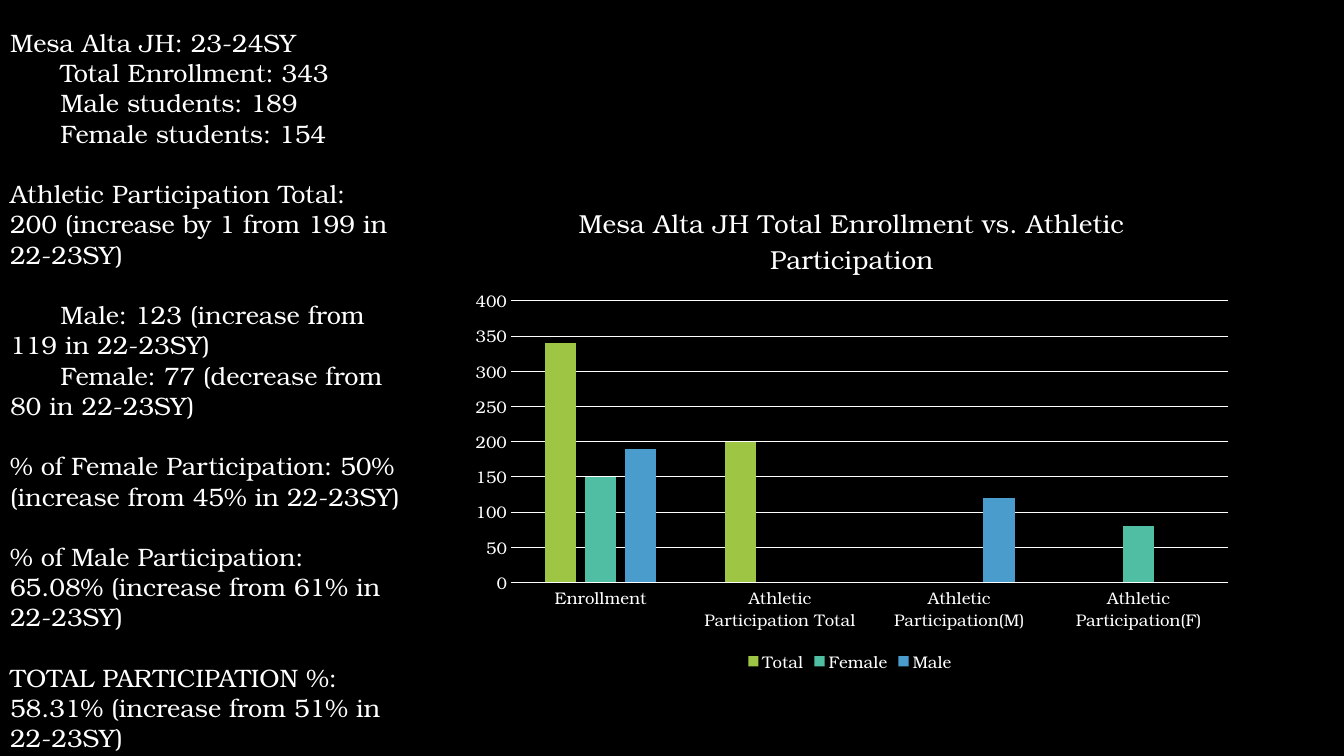
"""Build the Mesa Alta JH enrollment and athletic participation slide."""
from lxml import etree
from pptx import Presentation
from pptx.chart.data import CategoryChartData
from pptx.dml.color import RGBColor
from pptx.enum import chart as ch, text
from pptx.oxml.ns import qn
from pptx.util import Inches, Pt

FACTS = [
    [("Mesa Alta JH: 23-24SY", 0), ("Total Enrollment: 343", 1),
     ("Male students: 189", 1), ("Female students: 154", 1)],
    [("Athletic Participation Total: 200 (increase by 1 from 199 in 22-23SY)", 0)],
    [("Male: 123 (increase from 119 in 22-23SY)", 1),
     ("Female: 77 (decrease from 80 in 22-23SY)", 1)],
    [("% of Female Participation: 50% (increase from 45% in 22-23SY)", 0)],
    [("% of Male Participation: 65.08% (increase from 61% in 22-23SY)", 0)],
    [("TOTAL PARTICIPATION %:", 0), ("58.31% (increase from 51% in 22-23SY)", 0)],
]
CHART_TITLE = "Mesa Alta JH Total Enrollment vs. Athletic Participation"
CATEGORIES = ["Enrollment", "Athletic Participation Total",
              "Athletic Participation(M)", "Athletic Participation(F)"]
SERIES = [
    ("Total", (340, 200, None, None), RGBColor(0x9E, 0xC5, 0x44)),
    ("Female", (150, None, None, 80), RGBColor(0x50, 0xBE, 0xA3)),
    ("Male", (190, None, 120, None), RGBColor(0x4A, 0x9C, 0xCC)),
]
BLACK = RGBColor(0, 0, 0)
WHITE = RGBColor(0xFF, 0xFF, 0xFF)
FONT = "TeX Gyre Bonum"
LINE_PT = 21.6


def style(font, size):
    """Apply the slide's typeface and text colour."""
    font.name, font.size, font.bold = FONT, Pt(size), False
    font.color.rgb = WHITE


def place(parent, index, **fractions):
    """Give a chart part a manual layout in fractions of the chart."""
    for old in parent.findall(qn("c:layout")):
        parent.remove(old)
    layout = etree.Element(qn("c:layout"))
    manual = etree.SubElement(layout, qn("c:manualLayout"))
    if "w" in fractions:
        etree.SubElement(manual, qn("c:layoutTarget")).set("val", "inner")
    for axis in "xy":
        etree.SubElement(manual, qn(f"c:{axis}Mode")).set("val", "edge")
    for key, value in fractions.items():
        etree.SubElement(manual, qn(f"c:{key}")).set("val", str(value))
    parent.insert(index, layout)


def add_facts(s):
    """Fill the body placeholder with the participation figures."""
    body = s.placeholders[1]
    body.left, body.top = Inches(0), Inches(0.22)
    body.width, body.height = Inches(4.07), Inches(7.98)
    tf = body.text_frame
    tf.word_wrap, tf.auto_size = True, text.MSO_AUTO_SIZE.NONE
    tf.vertical_anchor = text.MSO_ANCHOR.TOP
    p = tf.paragraphs[0]
    for g, group in enumerate(FACTS):
        for i, (line, level) in enumerate(group):
            if g or i:
                p = tf.add_paragraph()
            p.alignment, p.line_spacing = text.PP_ALIGN.LEFT, 1.0
            p.space_before = Pt(LINE_PT if g and not i else 0)
            p.space_after = Pt(0)
            pPr = p._p.get_or_add_pPr()
            pPr.set("marL", "0")
            pPr.set("indent", str(Inches(0.5 * level)))
            etree.SubElement(pPr, qn("a:buNone"))
            r = p.add_run()
            r.text = line
            style(r.font, 18)


def add_participation_chart(s):
    """Add the clustered column chart."""
    data = CategoryChartData()
    data.categories = CATEGORIES
    for name, values, _ in SERIES:
        data.add_series(name, values)
    chart = s.shapes.add_chart(
        ch.XL_CHART_TYPE.COLUMN_CLUSTERED, Inches(4.52), Inches(1.81),
        Inches(7.82), Inches(4.9), data).chart
    style(chart.font, 10)
    chart.has_title = True
    r = chart.chart_title.text_frame.paragraphs[0].add_run()
    r.text = CHART_TITLE
    style(r.font, 18.6)
    place(chart.chart_title._element, 1, x=0.15, y=0.03)

    chart.has_legend = True
    chart.legend.position = ch.XL_LEGEND_POSITION.BOTTOM
    chart.legend.include_in_layout = False
    style(chart.legend.font, 12)

    plot = chart.plots[0]
    plot.gap_width, plot.overlap, plot.vary_by_categories = 219, -27, False
    for series, (_, _, color) in zip(plot.series, SERIES):
        series.format.fill.solid()
        series.format.fill.fore_color.rgb = color
    place(plot._element.getparent(), 0, x=0.07, y=0.24, w=0.91, h=0.57)

    cat_axis, val_axis = chart.category_axis, chart.value_axis
    for axis in (cat_axis, val_axis):
        axis.major_tick_mark = axis.minor_tick_mark = ch.XL_TICK_MARK.NONE
        style(axis.tick_labels.font, 12)
    val_axis.minimum_scale, val_axis.maximum_scale = 0, 400
    val_axis.major_unit = 50
    val_axis.format.line.fill.background()
    for line in (cat_axis.format.line, val_axis.major_gridlines.format.line):
        line.color.rgb, line.width = WHITE, Pt(0.75)


def main():
    """Create and save the presentation."""
    prs = Presentation()
    prs.slide_width, prs.slide_height = Inches(13.33), Inches(7.5)
    s = prs.slides.add_slide(prs.slide_layouts[1])
    s.background.fill.solid()
    s.background.fill.fore_color.rgb = BLACK
    title = s.shapes.title._element
    title.getparent().remove(title)
    add_facts(s)
    add_participation_chart(s)
    prs.save("out.pptx")


if __name__ == "__main__":
    main()
